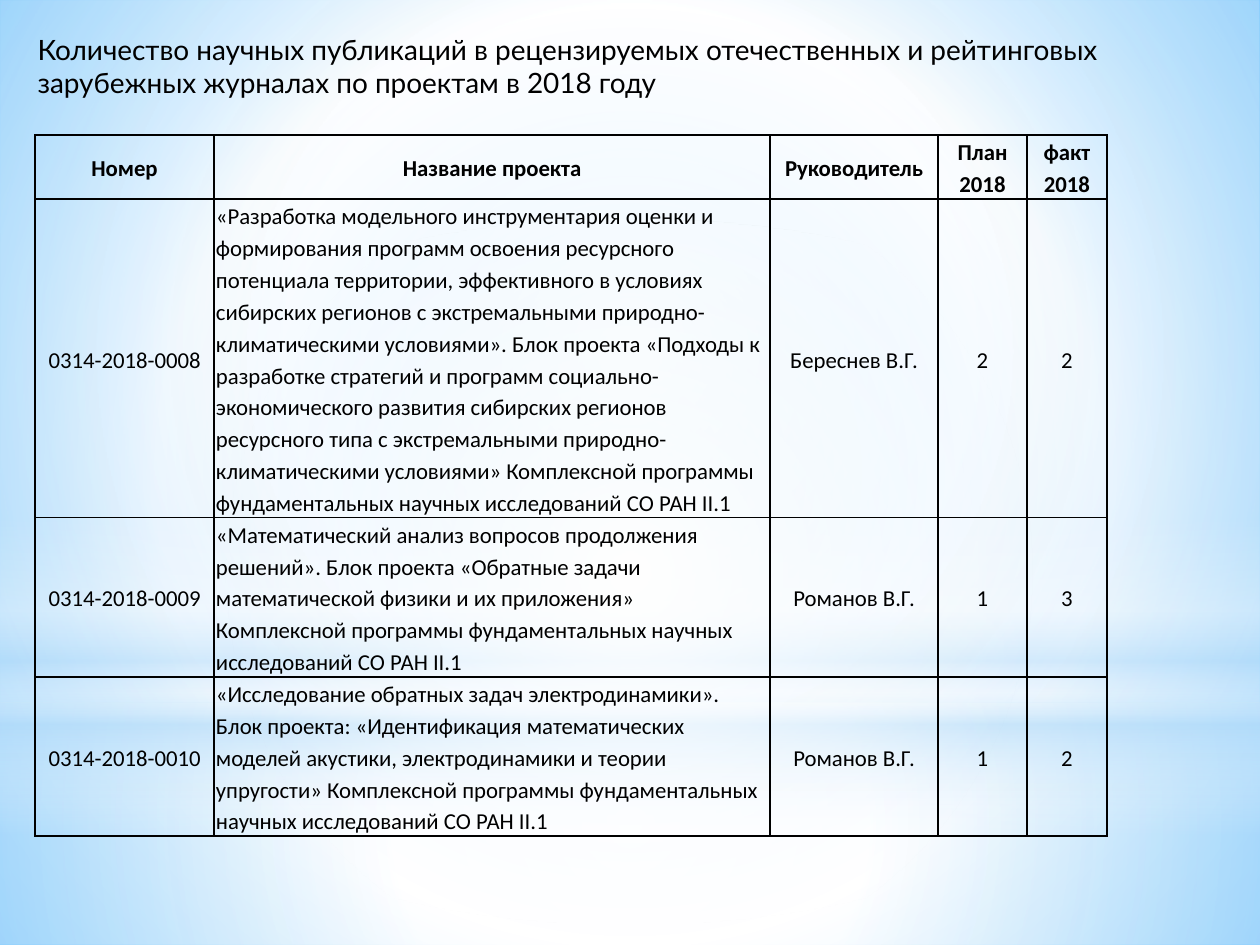
from lxml import etree
from pptx import Presentation
from pptx.dml.color import RGBColor
from pptx.enum.shapes import MSO_SHAPE
from pptx.enum.text import MSO_ANCHOR, MSO_AUTO_SIZE, PP_ALIGN
from pptx.oxml import parse_xml
from pptx.oxml.ns import nsdecls, qn
from pptx.util import Pt

RECT, OVAL = MSO_SHAPE.RECTANGLE, MSO_SHAPE.OVAL
LEFT, MID = PP_ALIGN.LEFT, PP_ALIGN.CENTER
TOP, CENTER = MSO_ANCHOR.TOP, MSO_ANCHOR.MIDDLE
FIXED = MSO_AUTO_SIZE.NONE

WIDE, HIGH = 1260, 945
BLACK, WHITE, SKY = "000000", "FFFFFF", "B4DCFA"
PAGE = [(0, "99D4FE", 100), (60, WHITE, 100), (100, "54BDFF", 100)]

# Backdrop layers: shape, box, (position, colour, opacity) stops, angle
LAYERS = [
    (RECT, (0, 703, WIDE, 242),
     [(0, WHITE, 90), (37, WHITE, 75), (100, SKY, 78)], None),
    (RECT, (0, 0, WIDE, 703),
     [(0, WHITE, 88), (48, WHITE, 61), (100, SKY, 78)], None),
    (RECT, (0, 519, WIDE, 315),
     [(0, WHITE, 0), (29, WHITE, 29), (45, SKY, 40),
      (55, WHITE, 25), (65, SKY, 60), (100, WHITE, 0)], 90),
    (OVAL, (0, 220, WIDE, 703),
     [(0, WHITE, 100), (56, WHITE, 0), (100, WHITE, 0)], None),
]

TITLE = ("Количество научных публикаций в рецензируемых отечественных и "
         "рейтинговых зарубежных журналах по проектам в 2018 году")
COLS = [179, 556, 168, 89, 80]
ROWS = [64, 318, 159, 159]
DATA = [
    ("Номер", "Название проекта", "Руководитель", "План 2018", "факт 2018"),
    ("0314-2018-0008",
     "«Разработка модельного инструментария оценки и формирования программ "
     "освоения ресурсного потенциала территории, эффективного в условиях "
     "сибирских регионов с экстремальными природно-климатическими условиями». "
     "Блок проекта «Подходы к разработке стратегий и программ "
     "социально-экономического развития сибирских регионов ресурсного типа с "
     "экстремальными природно-климатическими условиями» Комплексной программы "
     "фундаментальных научных исследований СО РАН II.1",
     "Береснев В.Г.", "2", "2"),
    ("0314-2018-0009",
     "«Математический анализ вопросов продолжения решений». Блок проекта "
     "«Обратные задачи математической физики и их приложения» Комплексной "
     "программы фундаментальных научных исследований СО РАН II.1",
     "Романов В.Г.", "1", "3"),
    ("0314-2018-0010",
     "«Исследование обратных задач электродинамики». Блок проекта: "
     "«Идентификация математических моделей акустики, электродинамики и теории "
     "упругости» Комплексной программы фундаментальных научных исследований "
     "СО РАН II.1",
     "Романов В.Г.", "1", "2"),
]


def px(n):
    return round(n * 914400 / 126)


def rgb(code):
    return RGBColor.from_string(code)


def style(par, face, size, bold, align, lead):
    par.alignment = align
    par.line_spacing = lead
    for run in par.runs:
        font = run.font
        font.name, font.size, font.bold = face, Pt(size), bold
        font.color.rgb = rgb(BLACK)


def blend(owner, stops, angle=None):
    """Turn the solid fill of an element into a gradient."""
    grad = parse_xml(f'<a:gradFill {nsdecls("a")} rotWithShape="1"><a:gsLst/></a:gradFill>')
    for pos, code, alpha in stops:
        stop = etree.SubElement(grad[0], qn("a:gs"), pos=str(pos * 1000))
        tint = etree.SubElement(stop, qn("a:srgbClr"), val=str(rgb(code)))
        if alpha < 100:
            etree.SubElement(tint, qn("a:alpha"), val=str(alpha * 1000))
    if angle is None:
        path = etree.SubElement(grad, qn("a:path"), path="circle")
        etree.SubElement(path, qn("a:fillToRect"), dict.fromkeys("ltrb", "50000"))
    else:
        etree.SubElement(grad, qn("a:lin"), ang=str(angle * 60000), scaled="0")
    owner.replace(owner.find(qn("a:solidFill")), grad)


def add_back(slide):
    fill = slide.background.fill
    fill.solid()
    fill.fore_color.rgb = rgb(WHITE)
    blend(slide.element.find(".//" + qn("p:bgPr")), PAGE)
    for kind, box, stops, angle in LAYERS:
        layer = slide.shapes.add_shape(kind, *map(px, box))
        layer.shadow.inherit = False
        layer.line.fill.background()
        layer.fill.solid()
        blend(layer.element.spPr, stops, angle)


def add_edges(cell):
    props = cell.fill and cell._tc.get_or_add_tcPr()
    for i, side in enumerate(("lnL", "lnR", "lnT", "lnB")):
        props.insert(i, parse_xml(
            f'<a:{side} {nsdecls("a")} w="{Pt(1)}"><a:solidFill>'
            f'<a:srgbClr val="{BLACK}"/></a:solidFill></a:{side}>'))


def add_grid(slide, left, top):
    box = (left, top, sum(COLS), sum(ROWS))
    table = slide.shapes.add_table(len(ROWS), len(COLS), *map(px, box)).table
    table.first_row = table.horz_banding = False
    for col, width in zip(table.columns, COLS):
        col.width = px(width)
    for r, (row, height) in enumerate(zip(table.rows, ROWS)):
        row.height = px(height)
        for c, cell in enumerate(row.cells):
            cell.text_frame.text = DATA[r][c]
            cell.vertical_anchor = CENTER
            cell.margin_left = cell.margin_right = px(2)
            cell.margin_top = cell.margin_bottom = 0
            cell.fill.background()
            add_edges(cell)
            align = LEFT if r and c == 1 else MID
            style(cell.text_frame.paragraphs[0], "Calibri", 13, r == 0, align, 1.15)


def add_title(slide, left, top, width, height):
    title = slide.shapes.title
    title.left, title.top = px(left), px(top)
    title.width, title.height = px(width), px(height)
    frame = title.text_frame
    frame.text = TITLE
    frame.word_wrap = True
    frame.auto_size = FIXED
    frame.vertical_anchor = TOP
    style(frame.paragraphs[0], "Lato", 16, False, LEFT, 1.0)
    # Bring the title in front of the backdrop
    slide.shapes.element.append(title.element)


def main():
    deck = Presentation()
    deck.slide_width, deck.slide_height = px(WIDE), px(HIGH)
    slide = deck.slides.add_slide(deck.slide_layouts[5])
    add_back(slide)
    add_grid(slide, 35, 135)
    add_title(slide, 25, 26, 1201, 81)
    deck.save("out.pptx")


if __name__ == "__main__":
    main()
